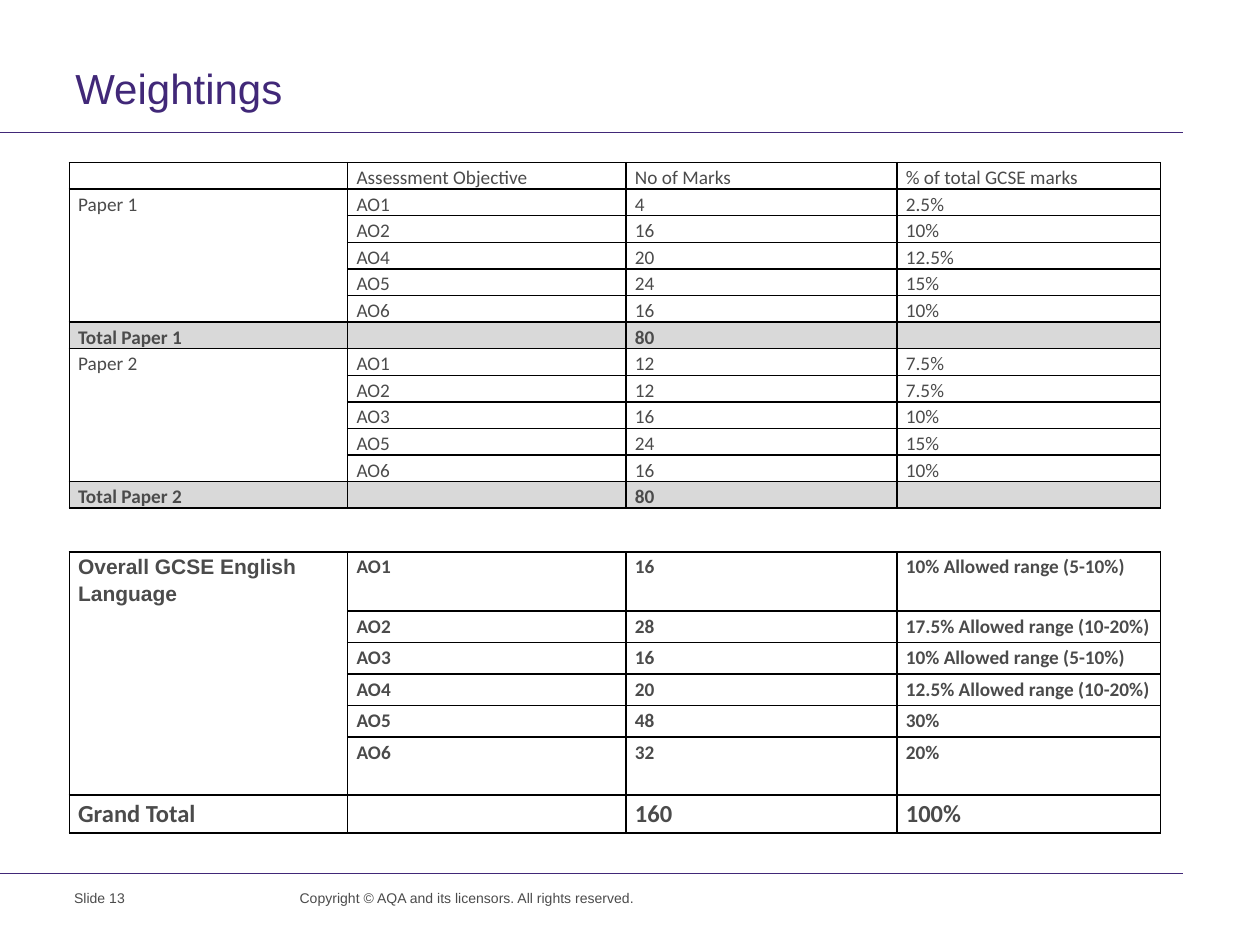
from lxml.etree import SubElement
from pptx import Presentation
from pptx.dml.color import RGBColor
from pptx.enum.shapes import MSO_CONNECTOR
from pptx.enum.text import MSO_ANCHOR
from pptx.oxml.ns import qn
from pptx.util import Inches, Pt

COLORS = {"purple": "412878", "text": "4B4B4B", "border": "000000",
          "total": "D9D9D9", "white": "FFFFFF"}
COLUMN_WIDTHS = [2.21, 2.21, 2.15, 2.09]

PAPERS = [
    ["", "Assessment Objective", "No of Marks", "% of total GCSE marks"],
    ["Paper 1", "AO1", "4", "2.5%"],
    ["", "AO2", "16", "10%"],
    ["", "AO4", "20", "12.5%"],
    ["", "AO5", "24", "15%"],
    ["", "AO6", "16", "10%"],
    ["Total Paper 1", "", "80", ""],
    ["Paper 2", "AO1", "12", "7.5%"],
    ["", "AO2", "12", "7.5%"],
    ["", "AO3", "16", "10%"],
    ["", "AO5", "24", "15%"],
    ["", "AO6", "16", "10%"],
    ["Total Paper 2", "", "80", ""],
]
OVERALL = [
    ["Overall GCSE English Language", "AO1", "16", "10% Allowed range (5-10%)"],
    ["", "AO2", "28", "17.5% Allowed range (10-20%)"],
    ["", "AO3", "16", "10% Allowed range (5-10%)"],
    ["", "AO4", "20", "12.5% Allowed range (10-20%)"],
    ["", "AO5", "48", "30%"],
    ["", "AO6", "32", "20%"],
    ["Grand Total", "", "160", "100%"],
]


def rgb(name):
    return RGBColor.from_string(COLORS[name])


def write(tf, text, size=11, font="Calibri", color="text", bold=False, spacing=None):
    p = tf.paragraphs[0]
    if spacing:
        p.line_spacing = spacing
    if not text:
        # Keep the empty line as low as the written ones
        SubElement(p._p, qn("a:endParaRPr"), sz=str(size * 100))
        return
    r = p.add_run()
    r.text = text
    r.font.size = Pt(size)
    r.font.name = font
    r.font.bold = bold
    r.font.color.rgb = rgb(color)


def add_text(s, x, y, w, h, text, anchor=MSO_ANCHOR.TOP, **fmt):
    tf = s.shapes.add_textbox(Inches(x), Inches(y), Inches(w), Inches(h)).text_frame
    tf.word_wrap = True
    tf.vertical_anchor = anchor
    write(tf, text, font="Arial", **fmt)


def add_rule(s, y):
    line = s.shapes.add_connector(MSO_CONNECTOR.STRAIGHT, 0, Inches(y), Inches(9.39), Inches(y))
    line.line.color.rgb = rgb("purple")
    line.line.width = Pt(0.6)
    SubElement(line._element.spPr, qn("a:effectLst"))


def add_borders(cell):
    tc_pr = cell._tc.get_or_add_tcPr()
    for side in ("lnL", "lnR", "lnT", "lnB"):
        ln = SubElement(tc_pr, qn(f"a:{side}"), w=str(Pt(1)))
        fill = SubElement(ln, qn("a:solidFill"))
        SubElement(fill, qn("a:srgbClr"), val=COLORS["border"])


def add_marks_table(s, y, rows, heights, merges, row_fill, cell_format):
    """row_fill(label) gives a colour name or None; cell_format(label, col) the text format."""
    table = s.shapes.add_table(len(rows), len(COLUMN_WIDTHS), Inches(0.55), Inches(y),
                               Inches(sum(COLUMN_WIDTHS)), Inches(sum(heights))).table
    table.first_row = table.horz_banding = False
    for column, width in zip(table.columns, COLUMN_WIDTHS):
        column.width = Inches(width)
    for i, (row, height) in enumerate(zip(rows, heights)):
        table.rows[i].height = Inches(height)
        fill = row_fill(row[0])
        for j, text in enumerate(row):
            cell = table.cell(i, j)
            cell.margin_left = cell.margin_right = Inches(0.07)
            cell.margin_top = cell.margin_bottom = 0
            add_borders(cell)
            if fill:
                cell.fill.solid()
                cell.fill.fore_color.rgb = rgb(fill)
            else:
                cell.fill.background()
            write(cell.text_frame, text, spacing=1.15, **cell_format(row[0], j))
    for first, last in merges:
        table.cell(first, 0).merge(table.cell(last, 0))


def paper_fill(label):
    return "total" if label.startswith("Total") else None


def paper_format(label, col):
    return {"bold": label.startswith("Total")}


def overall_format(label, col):
    if label == "Grand Total":
        return {"size": 14, "bold": True}
    if label and col == 0:
        return {"size": 12, "font": "Arial", "bold": True}
    return {"bold": True}


def main():
    prs = Presentation()
    prs.slide_width, prs.slide_height = Inches(10), Inches(7.5)
    s = prs.slides.add_slide(prs.slide_layouts[6])

    # Header and footer
    add_rule(s, 1.05)
    add_rule(s, 6.93)
    add_text(s, 0.5, 0.44, 9, 0.52, "Weightings", MSO_ANCHOR.MIDDLE,
             size=24, color="purple", spacing=Pt(28))
    add_text(s, 0.49, 7.01, 1.56, 0.38, "Slide 13", size=8)
    add_text(s, 2.28, 7.01, 2.93, 0.26,
             "Copyright © AQA and its licensors. All rights reserved.", size=8)

    # Marks for each paper
    add_marks_table(s, 1.29, PAPERS, [0.21] * len(PAPERS), [(1, 5), (7, 11)],
                    paper_fill, paper_format)

    # Marks for the whole qualification
    add_marks_table(s, 4.38, OVERALL, [0.47] + [0.25] * 4 + [0.42, 0.3], [(0, 5)],
                    lambda label: "white", overall_format)

    prs.save("out.pptx")


if __name__ == "__main__":
    main()
